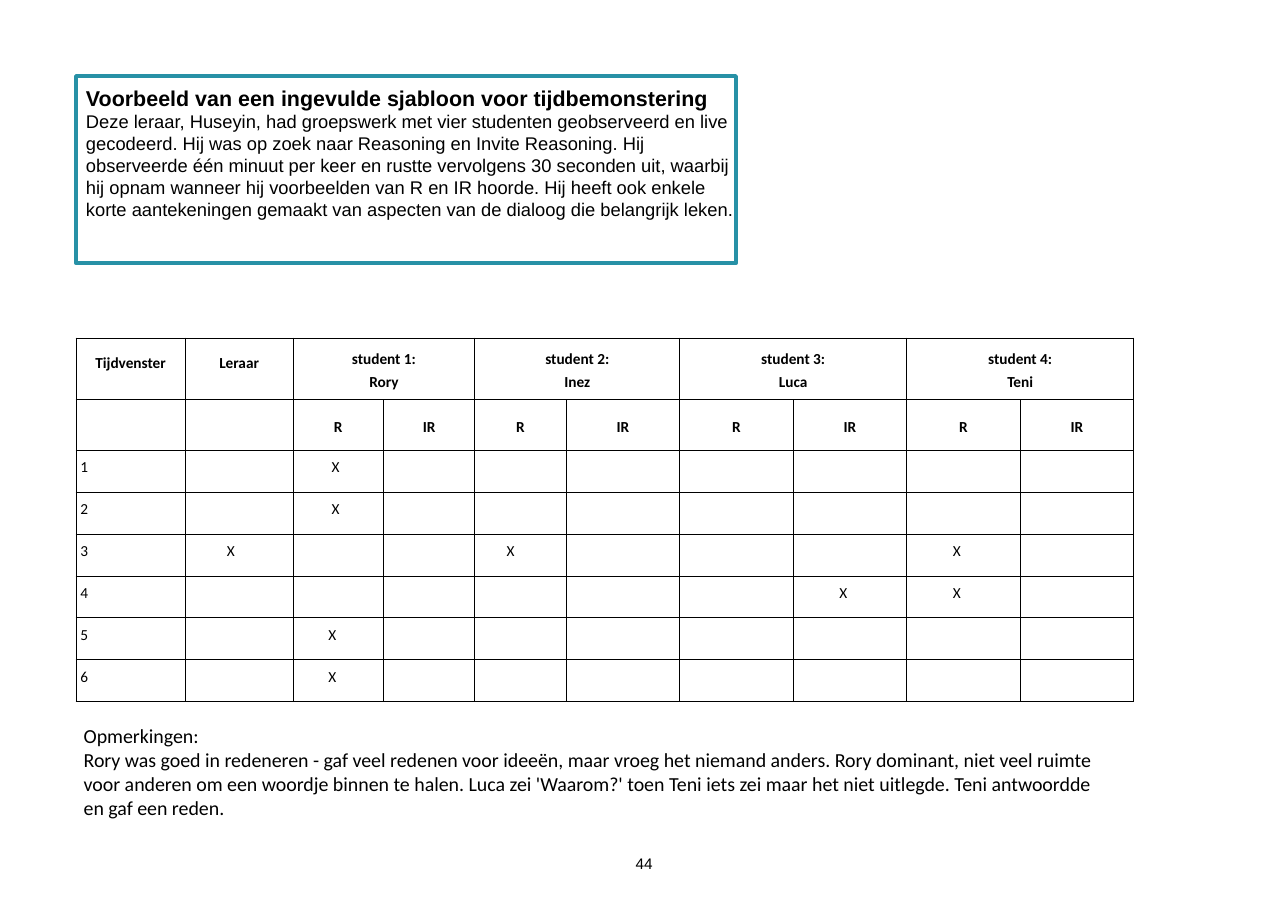
from lxml import etree
from pptx import Presentation
from pptx.dml.color import RGBColor
from pptx.enum.shapes import MSO_SHAPE
from pptx.enum.text import MSO_ANCHOR, MSO_AUTO_SIZE, PP_ALIGN
from pptx.oxml import parse_xml
from pptx.oxml.ns import nsdecls
from pptx.util import Inches, Pt

BLACK = RGBColor(0x00, 0x00, 0x00)
WHITE = RGBColor(0xFF, 0xFF, 0xFF)
TEAL = RGBColor(0x27, 0x91, 0xA6)

COL_WIDTHS = [0.99, 0.98, 0.82, 0.83, 0.83] + [1.03] * 5
ROW_HEIGHTS = [0.56, 0.46] + [0.38] * 6
STUDENTS = ["Rory", "Inez", "Luca", "Teni"]
# (time window, column): left margin of the mark
MARKS = {(1, 2): 0.35, (2, 2): 0.35, (3, 1): 0.38, (3, 4): 0.29, (3, 8): 0.42,
         (4, 7): 0.42, (4, 8): 0.42, (5, 2): 0.32, (6, 2): 0.32}


def write(tf, lines, size, font, bold=False, align=PP_ALIGN.LEFT, spacing=1.0):
    for i, line in enumerate(lines):
        p = tf.paragraphs[0] if i == 0 else tf.add_paragraph()
        p.alignment = align
        p.line_spacing = spacing
        r = p.add_run()
        r.text = line
        for name, value in {"size": Pt(size), "name": font, "bold": bold}.items():
            setattr(r.font, name, value)
        r.font.color.rgb = BLACK


def set_frame(tf, left=0, top=0):
    """Prepare a wrapping, top-anchored frame with only left and top insets."""
    frame = {"word_wrap": True, "auto_size": MSO_AUTO_SIZE.NONE,
             "vertical_anchor": MSO_ANCHOR.TOP, "margin_left": Inches(left),
             "margin_top": Inches(top), "margin_right": 0, "margin_bottom": 0}
    for name, value in frame.items():
        setattr(tf, name, value)


prs = Presentation()
prs.slide_width, prs.slide_height = Inches(11.69), Inches(8.27)
s = prs.slides.add_slide(prs.slide_layouts[5])

# Introduction: heading above the body text, inside one frame
title = s.shapes.title
title.left, title.top = Inches(0.69), Inches(0.77)
title.width, title.height = Inches(5.99), Inches(0.23)
set_frame(title.text_frame, left=0.09)
write(title.text_frame, ["Voorbeeld van een ingevulde sjabloon voor tijdbemonstering"],
      14, "Arial", bold=True)

box = s.shapes.add_shape(MSO_SHAPE.RECTANGLE, Inches(0.69), Inches(0.69),
                         Inches(5.99), Inches(1.7))
box.shadow.inherit = False
box.fill.background()
box.line.color.rgb = TEAL
box.line.width = Pt(2.5)
set_frame(box.text_frame, left=0.09, top=0.31)
write(box.text_frame, [
    "Deze leraar, Huseyin, had groepswerk met vier studenten geobserveerd en live "
    "gecodeerd. Hij was op zoek naar Reasoning en Invite Reasoning. Hij observeerde "
    "één minuut per keer en rustte vervolgens 30 seconden uit, waarbij hij opnam "
    "wanneer hij voorbeelden van R en IR hoorde. Hij heeft ook enkele korte "
    "aantekeningen gemaakt van aspecten van de dialoog die belangrijk leken."],
    12, "Arial")

# Observation table
table = s.shapes.add_table(len(ROW_HEIGHTS), len(COL_WIDTHS), Inches(0.69), Inches(3.07),
                           Inches(sum(COL_WIDTHS)), Inches(sum(ROW_HEIGHTS))).table
table.first_row = table.horz_banding = False
for col, width in zip(table.columns, COL_WIDTHS):
    col.width = Inches(width)
for row, height in zip(table.rows, ROW_HEIGHTS):
    row.height = Inches(height)

texts = {(0, 0): ["Tijdvenster"], (0, 1): ["Leraar"]}
for i, student in enumerate(STUDENTS):
    col = 2 + 2 * i
    table.cell(0, col).merge(table.cell(0, col + 1))
    texts[0, col] = [f"student {i + 1}:", student]
    texts[1, col], texts[1, col + 1] = ["R"], ["IR"]
for window in range(1, 7):
    texts[window + 1, 0] = [str(window)]
for window, col in MARKS:
    texts[window + 1, col] = ["X"]

for row in range(len(ROW_HEIGHTS)):
    for col in range(len(COL_WIDTHS)):
        cell = table.cell(row, col)
        cell.fill.solid()
        cell.fill.fore_color.rgb = WHITE
        inset = Inches(0.04) if (row, col) in texts else 0
        cell.margin_left = cell.margin_right = inset
        cell.margin_top = cell.margin_bottom = inset
        header = row < 2
        cell.vertical_anchor = MSO_ANCHOR.MIDDLE if header else MSO_ANCHOR.TOP
        if row == 0 and col < 2:
            cell.margin_bottom = Inches(0.17)
        if (row - 1, col) in MARKS:
            cell.margin_left = Inches(MARKS[row - 1, col])
        if (row, col) in texts:
            write(cell.text_frame, texts[row, col], 10, "Calibri", bold=header,
                  align=PP_ALIGN.CENTER if header else PP_ALIGN.LEFT, spacing=1.19)
        tc_pr = cell._tc.get_or_add_tcPr()
        for i, side in enumerate("LRTB"):
            tc_pr.insert(i, parse_xml(
                f'<a:ln{side} {nsdecls("a")} w="{Pt(0.75)}"><a:solidFill>'
                f'<a:srgbClr val="{BLACK}"/></a:solidFill></a:ln{side}>'))

# Remarks and page number
remarks = s.shapes.add_textbox(Inches(0.76), Inches(6.57), Inches(9.34), Inches(0.65))
set_frame(remarks.text_frame)
write(remarks.text_frame, [
    "Opmerkingen:",
    "Rory was goed in redeneren - gaf veel redenen voor ideeën, maar vroeg het niemand "
    "anders. Rory dominant, niet veel ruimte voor anderen om een woordje binnen te halen. "
    "Luca zei 'Waarom?' toen Teni iets zei maar het niet uitlegde. Teni antwoordde en gaf "
    "een reden."], 13, "Calibri")

page = s.shapes.add_textbox(Inches(5.74), Inches(7.75), Inches(0.21), Inches(0.18))
set_frame(page.text_frame, left=0.03)
write(page.text_frame, ["44"], 10, "Arial")

prs.save("out.pptx")
